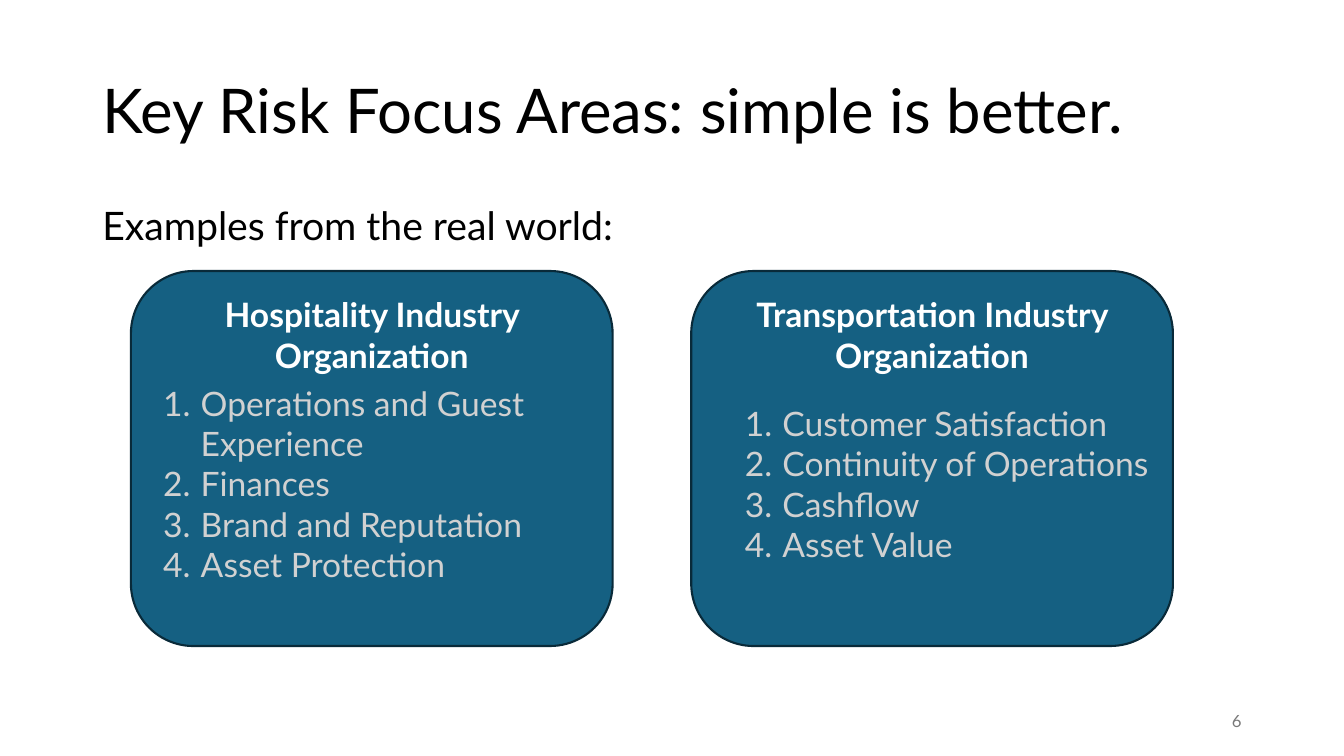
from dataclasses import dataclass

from lxml import etree
from pptx import Presentation
from pptx.dml.color import RGBColor
from pptx.enum.shapes import MSO_SHAPE
from pptx.enum.text import MSO_ANCHOR, PP_ALIGN
from pptx.oxml.ns import qn
from pptx.util import Cm, Pt

ROUNDED = MSO_SHAPE.ROUNDED_RECTANGLE
TOP, MIDDLE = MSO_ANCHOR.TOP, MSO_ANCHOR.MIDDLE
LEFT, CENTER, RIGHT = PP_ALIGN.LEFT, PP_ALIGN.CENTER, PP_ALIGN.RIGHT


@dataclass(frozen=True)
class Theme:
    font: str = "Lato"
    text: RGBColor = RGBColor(0x00, 0x00, 0x00)
    card: RGBColor = RGBColor(0x15, 0x60, 0x82)
    card_line: RGBColor = RGBColor(0x09, 0x2A, 0x39)
    card_heading: RGBColor = RGBColor(0xFF, 0xFF, 0xFF)
    card_item: RGBColor = RGBColor(0xD1, 0xD1, 0xD1)
    page_number: RGBColor = RGBColor(0x79, 0x79, 0x79)
    title_size: Pt = Pt(44)
    intro_size: Pt = Pt(28)
    card_size: Pt = Pt(24)
    page_number_size: Pt = Pt(12)


theme = Theme()


def write(shape, lines, size, color, align=LEFT, anchor=TOP):
    """Fill a shape with one paragraph per line and return the paragraphs."""
    frame = shape.text_frame
    frame.word_wrap = True
    frame.vertical_anchor = anchor
    frame.text = "\n".join(lines)
    for paragraph in frame.paragraphs:
        paragraph.alignment = align
        paragraph.font.name = theme.font
        paragraph.font.size = size
        paragraph.font.color.rgb = color
    return frame.paragraphs


def number(paragraph, indent):
    """Turn a paragraph into an automatically numbered item."""
    properties = paragraph._p.get_or_add_pPr()
    properties.set("marL", str(indent))
    properties.set("indent", str(-indent))
    bullet = etree.Element(qn("a:buAutoNum"), type="arabicPeriod")
    properties.insert_element_before(bullet, "a:tabLst", "a:defRPr", "a:extLst")


presentation = Presentation()
presentation.slide_width, presentation.slide_height = Cm(33.87), Cm(19.05)
slide = presentation.slides.add_slide(presentation.slide_layouts[6])
shapes = slide.shapes

# Title and introduction
title = shapes.add_textbox(Cm(2.33), Cm(1.01), Cm(29.21), Cm(3.68))
title_lines = write(title, ["Key Risk Focus Areas: simple is better."],
                    theme.title_size, theme.text, anchor=MIDDLE)
title_lines[0].line_spacing = 0.9

intro = shapes.add_textbox(Cm(2.33), Cm(5.08), Cm(29.21), Cm(12.09))
intro_lines = write(intro, ["Examples from the real world:"],
                    theme.intro_size, theme.text)
intro_lines[0].line_spacing = 0.9
intro_lines[0].space_before = Pt(10)

# Industry cards: heading, card left, list left, list top, list height, items
cards = [
    ("Hospitality Industry Organization", 3.3, 3.86, 9.52, 5.38,
     ["Operations and Guest Experience", "Finances",
      "Brand and Reputation", "Asset Protection"]),
    ("Transportation Industry Organization", 17.42, 18.52, 10.03, 4.37,
     ["Customer Satisfaction", "Continuity of Operations",
      "Cashflow", "Asset Value"]),
]
for heading, card_left, list_left, list_top, list_height, items in cards:
    card = shapes.add_shape(ROUNDED, Cm(card_left), Cm(6.83), Cm(12.14), Cm(9.45))
    card.shadow.inherit = False
    card.fill.solid()
    card.fill.fore_color.rgb = theme.card
    card.line.color.rgb = theme.card_line
    card.line.width = Pt(1.5)
    heading_lines = write(card, [heading], theme.card_size, theme.card_heading, CENTER)
    heading_lines[0].font.bold = True

    item_list = shapes.add_textbox(Cm(list_left), Cm(list_top), Cm(11.05), Cm(list_height))
    for paragraph in write(item_list, items, theme.card_size, theme.card_item):
        number(paragraph, Cm(0.95))

# Page number
page_number = shapes.add_textbox(Cm(23.92), Cm(17.65), Cm(7.62), Cm(1.01))
write(page_number, ["6"], theme.page_number_size, theme.page_number, RIGHT, MIDDLE)

presentation.save("out.pptx")
